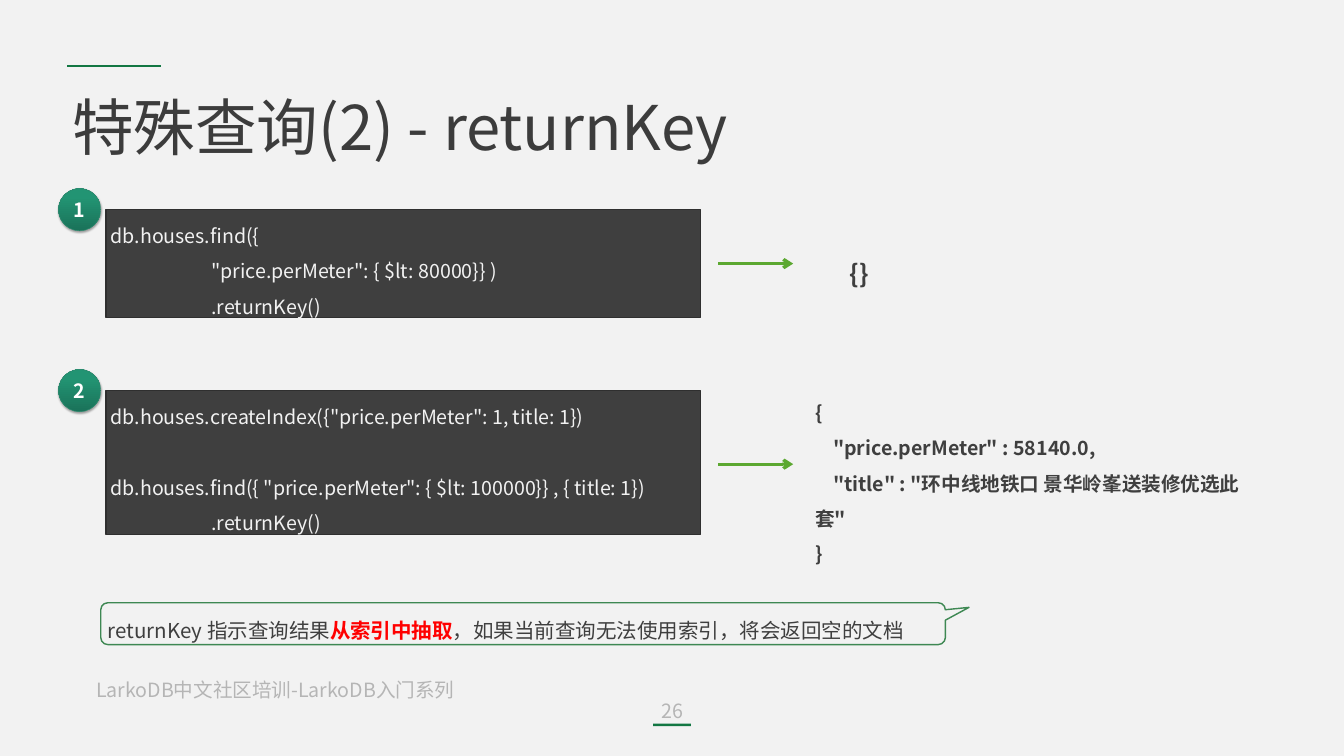
from copy import deepcopy

from lxml.etree import SubElement
from pptx import Presentation
from pptx.dml.color import RGBColor
from pptx.enum.shapes import MSO_CONNECTOR, MSO_SHAPE
from pptx.enum.text import MSO_ANCHOR, PP_ALIGN
from pptx.oxml.ns import qn
from pptx.util import Inches, Pt

FONT = "Noto Sans CJK SC"
COLORS = {
    "bg": "F2F2F2", "title": "3C3C3C", "dark": "3F3F3F", "border": "2F2F2F",
    "muted": "B5B5B5", "green": "137743", "callout": "3E8853", "arrow": "5CA831",
    "badge_line": "2E8A6F", "white": "FFFFFF", "red": "FF0000", "shadow": "000000",
}
BADGE_STOPS = [(0, "1A7259"), (0.8, "229473"), (1, "209774")]
RGB = {name: RGBColor.from_string(value) for name, value in COLORS.items()}


def write(s, lines, size=28, color="dark", bold=False, font=FONT, spacing=None,
          align=PP_ALIGN.LEFT, anchor=MSO_ANCHOR.TOP, inset=(0.1, 0.05),
          tab=None, gaps=None):
    """Fill a shape; a line is a string or a list of (text, color, bold) runs.
    gaps maps a line number to its space before in points."""
    tf = s.text_frame
    tf.word_wrap = True
    tf.vertical_anchor = anchor
    tf.margin_left = tf.margin_right = Inches(inset[0])
    tf.margin_top = tf.margin_bottom = Inches(inset[1])
    for i, line in enumerate(lines):
        p = tf.paragraphs[0] if i == 0 else tf.add_paragraph()
        p.alignment = align
        if spacing:
            p.line_spacing = spacing
        if gaps and i in gaps:
            p.space_before = Pt(gaps[i])
        if tab:
            tabs = SubElement(p._p.get_or_add_pPr(), qn("a:tabLst"))
            SubElement(tabs, qn("a:tab"), pos=str(Inches(tab)), algn="l")
        runs = [(line, color, bold)] if isinstance(line, str) else line
        for text, run_color, run_bold in runs:
            r = p.add_run()
            r.text = text
            r.font.size = Pt(size)
            r.font.bold = run_bold
            r.font.name = font
            r.font.color.rgb = RGB[run_color]
            SubElement(r._r.get_or_add_rPr(), qn("a:ea"), typeface=font)


def add_line(x1, x2, y, color, width, arrow=False):
    s = slide.shapes.add_connector(MSO_CONNECTOR.STRAIGHT, Inches(x1), Inches(y),
                                   Inches(x2), Inches(y))
    s.line.color.rgb = RGB[color]
    s.line.width = Pt(width)
    if arrow:
        SubElement(s.line._get_or_add_ln(), qn("a:tailEnd"), type="arrow")
    SubElement(s._element.spPr, qn("a:effectLst"))


prs = Presentation()
prs.slide_width, prs.slide_height = Inches(26.67), Inches(15)
slide = prs.slides.add_slide(prs.slide_layouts[5])
slide.background.fill.solid()
slide.background.fill.fore_color.rgb = RGB["bg"]

# Title with its accent line
add_line(1.33, 3.19, 1.31, "green", 3.25)
title = slide.shapes.title
title.left, title.top, title.width, title.height = map(Inches, (1.33, 1.54, 24, 1.9))
write(title, ["特殊查询(2) - returnKey"], size=88, color="title",
      anchor=MSO_ANCHOR.MIDDLE)

# Numbered queries: code box, badge and arrow
queries = [
    (4.16, 2.14, 5.23, None,
     ["db.houses.find({", "\t\"price.perMeter\": { $lt: 80000}} )", "\t.returnKey()"]),
    (7.75, 2.85, 9.21, {1: 50.4},
     ["db.houses.createIndex({\"price.perMeter\": 1, title: 1})",
      "db.houses.find({ \"price.perMeter\": { $lt: 100000}} , { title: 1})",
      "\t.returnKey()"]),
]
for number, (top, height, arrow_y, gaps, code) in enumerate(queries, 1):
    box = slide.shapes.add_shape(MSO_SHAPE.RECTANGLE, Inches(2.1), Inches(top),
                                 Inches(11.8), Inches(height))
    box.shadow.inherit = False
    box.fill.solid()
    box.fill.fore_color.rgb = RGB["dark"]
    box.line.color.rgb = RGB["border"]
    box.line.width = Pt(2)
    write(box, code, color="bg", spacing=1.5, tab=2, gaps=gaps)

    badge = slide.shapes.add_shape(MSO_SHAPE.OVAL, Inches(1.16), Inches(top - 0.42),
                                   Inches(0.84), Inches(0.84))
    badge.fill.gradient()
    badge.fill.gradient_angle = 90
    stops = badge._element.spPr.find(".//" + qn("a:gsLst"))
    stops.append(deepcopy(stops[0]))
    for stop, (position, color) in zip(badge.fill.gradient_stops, BADGE_STOPS):
        stop.position = position
        stop.color.rgb = RGBColor.from_string(color)
    badge.line.color.rgb = RGB["badge_line"]
    badge.line.width = Pt(0.75)
    badge.shadow.inherit = False
    effects = badge._element.spPr.find(qn("a:effectLst"))
    shadow = SubElement(effects, qn("a:outerShdw"), blurRad=str(Pt(3.1)),
                        dist=str(Pt(1.8)), dir="5400000", rotWithShape="0")
    shade = SubElement(shadow, qn("a:srgbClr"), val=COLORS["shadow"])
    SubElement(shade, qn("a:alpha"), val="35000")
    write(badge, [str(number)], color="white", bold=True, align=PP_ALIGN.CENTER,
          anchor=MSO_ANCHOR.MIDDLE, inset=(0, 0))

    add_line(14.25, 15.74, arrow_y, "arrow", 4.5, arrow=True)

# Query results
results = [
    ((16.76, 4.78, 0.78, 0.9), 36, ["{}"]),
    ((16.08, 7.67, 9.08, 2.85), 28,
     ["{", "    \"price.perMeter\" : 58140.0,",
      "    \"title\" : \"环中线地铁口 景华岭峯送装修优选此套\"", "}"]),
]
for place, size, lines in results:
    s = slide.shapes.add_textbox(*map(Inches, place))
    write(s, lines, size=size, bold=True, spacing=1.5)

# Explanation callout
callout = slide.shapes.add_shape(MSO_SHAPE.ROUNDED_RECTANGULAR_CALLOUT, Inches(2),
                                 Inches(11.96), Inches(16.76), Inches(0.83))
for i, value in enumerate((0.528, -0.389, 0.167)):
    callout.adjustments[i] = value
callout.shadow.inherit = False
callout.fill.solid()
callout.fill.fore_color.rgb = RGB["bg"]
callout.line.color.rgb = RGB["callout"]
callout.line.width = Pt(2)
write(callout, [[("returnKey 指示查询结果", "dark", False),
                 ("从索引中抽取", "red", True),
                 ("，如果当前查询无法使用索引，将会返回空的文档", "dark", False)]],
      size=29.3, spacing=1.5, anchor=MSO_ANCHOR.MIDDLE)

# Footer and page number
footer = slide.shapes.add_textbox(Inches(1.81), Inches(13.4), Inches(8.75), Inches(0.57))
write(footer, ["LarkoDB中文社区培训-LarkoDB入门系列"], color="muted")
page = slide.shapes.add_textbox(Inches(12.53), Inches(13.82), Inches(1.62), Inches(0.57))
write(page, ["26"], color="muted", font="Noto Sans CJK TC", align=PP_ALIGN.CENTER)
bar = slide.shapes.add_shape(MSO_SHAPE.RECTANGLE, Inches(12.96), Inches(14.36),
                             Inches(0.75), Inches(0.05))
bar.shadow.inherit = False
bar.fill.solid()
bar.fill.fore_color.rgb = RGB["green"]
bar.line.fill.background()

prs.save("out.pptx")
